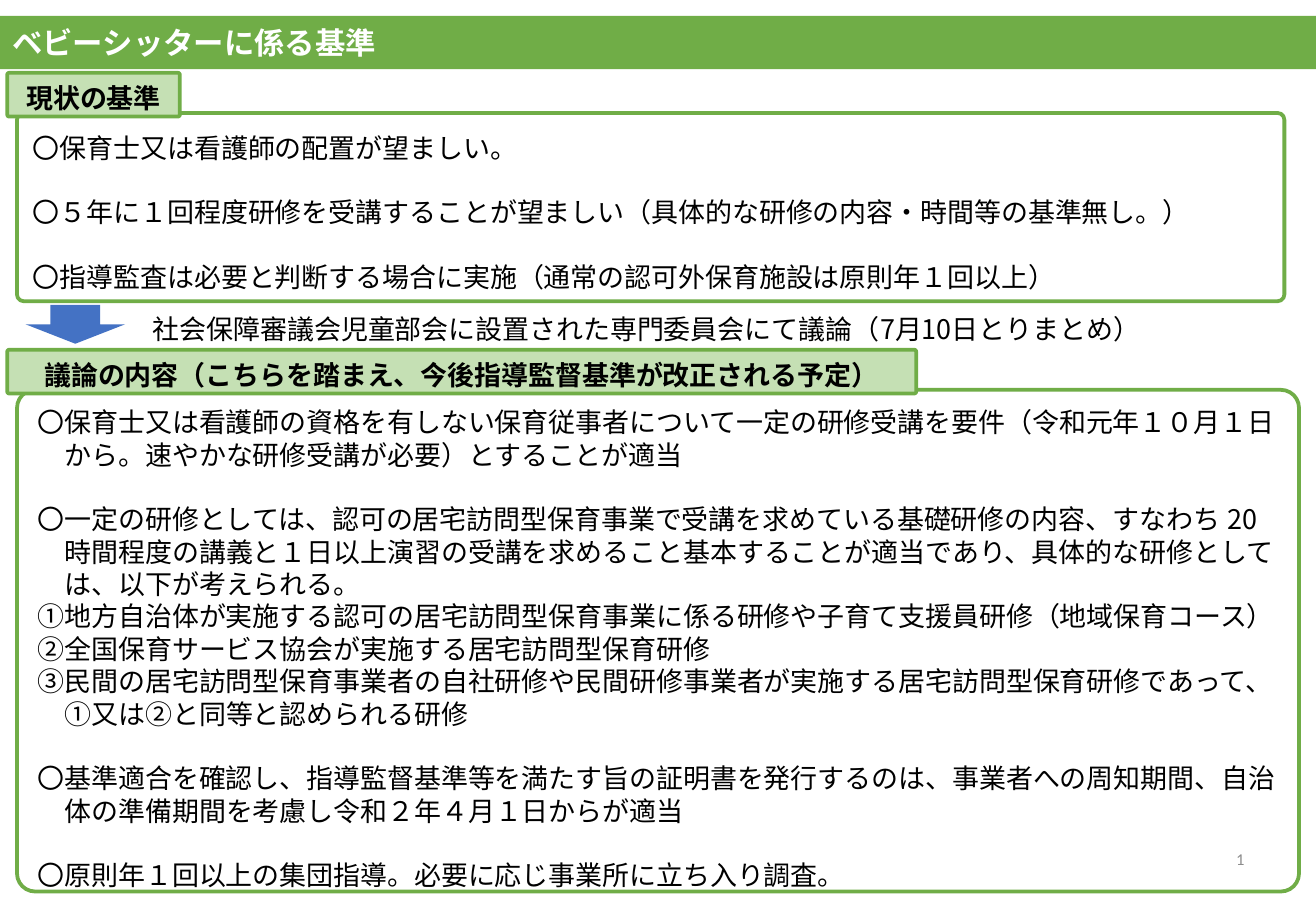
from lxml import etree
from pptx import Presentation
from pptx.dml.color import RGBColor
from pptx.enum import shapes, text
from pptx.oxml import ns
from pptx.util import Inches, Pt

FONT = "Noto Sans CJK JP"
GREEN, PALE_GREEN, BLUE = "70AD47", "C5E0B4", "4472C4"
BLACK, WHITE, GREY = "000000", "FFFFFF", "8C8C8C"
SIZE, LINE = 16, 19.2

TITLE = "ベビーシッターに係る基準"
DISCUSSION = "社会保障審議会児童部会に設置された専門委員会にて議論（7月10日とりまとめ）"

# Boxes are (left, top, width, height) in inches; "\v" breaks a line in an item.
SECTIONS = [
    {
        "label": "現状の基準",
        "label_box": (0.06, 0.6, 1.42, 0.36),
        "frame_box": (0.14, 0.93, 10.43, 1.55),
        "list_box": (0.17, 1.03, 10.54, 1.45),
        "items": [
            "〇保育士又は看護師の配置が望ましい。",
            "〇５年に１回程度研修を受講することが望ましい（具体的な研修の内容・時間等の基準無し。）",
            "〇指導監査は必要と判断する場合に実施（通常の認可外保育施設は原則年１回以上）",
        ],
    },
    {
        "label": "議論の内容（こちらを踏まえ、今後指導監督基準が改正される予定）",
        "label_box": (0.06, 2.88, 7.48, 0.36),
        "frame_box": (0.14, 3.21, 10.55, 4.13),
        "list_box": (0.21, 3.29, 10.48, 4.14),
        "items": [
            "〇保育士又は看護師の資格を有しない保育従事者について一定の研修受講を要件（令和元年１０月１日\v"
            "から。速やかな研修受講が必要）とすることが適当",
            "〇一定の研修としては、認可の居宅訪問型保育事業で受講を求めている基礎研修の内容、すなわち 20\v"
            "時間程度の講義と１日以上演習の受講を求めること基本することが適当であり、具体的な研修として\v"
            "は、以下が考えられる。",
            "①地方自治体が実施する認可の居宅訪問型保育事業に係る研修や子育て支援員研修（地域保育コース）",
            "②全国保育サービス協会が実施する居宅訪問型保育研修",
            "③民間の居宅訪問型保育事業者の自社研修や民間研修事業者が実施する居宅訪問型保育研修であって、\v"
            "①又は②と同等と認められる研修",
            "〇基準適合を確認し、指導監督基準等を満たす旨の証明書を発行するのは、事業者への周知期間、自治\v"
            "体の準備期間を考慮し令和２年４月１日からが適当",
            "〇原則年１回以上の集団指導。必要に応じ事業所に立ち入り調査。",
        ],
    },
]


def rgb(hex_code):
    return RGBColor.from_string(hex_code)


def place(shape, box):
    shape.left, shape.top, shape.width, shape.height = map(Inches, box)


def write(shape, paragraphs, size=SIZE, color=BLACK, bold=False, font=FONT,
          align=text.PP_ALIGN.LEFT, anchor=text.MSO_ANCHOR.TOP,
          top=0.05, line=LINE, hanging=False):
    """Fill a shape with paragraphs; hanging lists get a gap before each 〇 item."""
    frame = shape.text_frame
    frame.word_wrap = True
    frame.auto_size = text.MSO_AUTO_SIZE.NONE
    frame.vertical_anchor = anchor
    frame.margin_left = frame.margin_right = Inches(0.1)
    frame.margin_top, frame.margin_bottom = Inches(top), Inches(0.05)
    for index, content in enumerate(paragraphs):
        paragraph = frame.add_paragraph() if index else frame.paragraphs[0]
        paragraph.text = content
        paragraph.alignment = align
        paragraph.line_spacing = Pt(line)
        gap = hanging and index and content.startswith("〇")
        paragraph.space_before = Pt(line if gap else 0)
        if hanging:
            props = paragraph._p.get_or_add_pPr()
            props.set("marL", str(Pt(size)))
            props.set("indent", str(-Pt(size)))
            etree.SubElement(props, ns.qn("a:buNone"))
        for run in paragraph.runs:
            run.font.size, run.font.bold, run.font.name = Pt(size), bold, font
            run.font.color.rgb = rgb(color)
            east_asian = etree.SubElement(run.font._element, ns.qn("a:ea"))
            east_asian.set("typeface", font)


def add_box(slide, kind, box, fill=None, line=None, corner=None):
    shape = slide.shapes.add_shape(kind, *map(Inches, box))
    shape.shadow.inherit = False
    if fill:
        shape.fill.solid()
        shape.fill.fore_color.rgb = rgb(fill)
    else:
        shape.fill.background()
    if line:
        shape.line.color.rgb = rgb(line)
        shape.line.width = Pt(2.25)
    else:
        shape.line.fill.background()
    if corner is not None:
        shape.adjustments[0] = corner
    return shape


def add_text(slide, box, content, **style):
    write(slide.shapes.add_textbox(*map(Inches, box)), [content], **style)


def main():
    deck = Presentation()
    deck.slide_width, deck.slide_height = Inches(10.83), Inches(7.5)
    slide = deck.slides.add_slide(deck.slide_layouts.get_by_name("Two Content"))
    middle = text.MSO_ANCHOR.MIDDLE
    rounded = shapes.MSO_SHAPE.ROUNDED_RECTANGLE

    title = slide.shapes.title
    place(title, (0, 0.13, 10.83, 0.44))
    title.fill.solid()
    title.fill.fore_color.rgb = rgb(GREEN)
    write(title, [TITLE], size=18, color=WHITE, bold=True, anchor=middle, line=22)

    for number, section in enumerate(SECTIONS, start=1):
        items = slide.placeholders[number]
        place(items, section["list_box"])
        write(items, section["items"], hanging=True)
        add_box(slide, rounded, section["frame_box"], line=GREEN, corner=0.036)
        label = add_box(slide, rounded, section["label_box"], PALE_GREEN, GREEN, 0.042)
        write(label, [section["label"]], bold=True, anchor=middle, top=0.1,
              align=text.PP_ALIGN.CENTER)

    add_box(slide, shapes.MSO_SHAPE.DOWN_ARROW, (0.21, 2.51, 0.82, 0.32), BLUE)
    add_text(slide, (1.16, 2.51, 9.6, 0.37), DISCUSSION, top=0.06)
    add_text(slide, (7.9, 6.87, 2.44, 0.4), "1", size=9.8, color=GREY, font="Calibri",
             align=text.PP_ALIGN.RIGHT, anchor=middle, line=12)

    deck.save("out.pptx")


if __name__ == "__main__":
    main()
